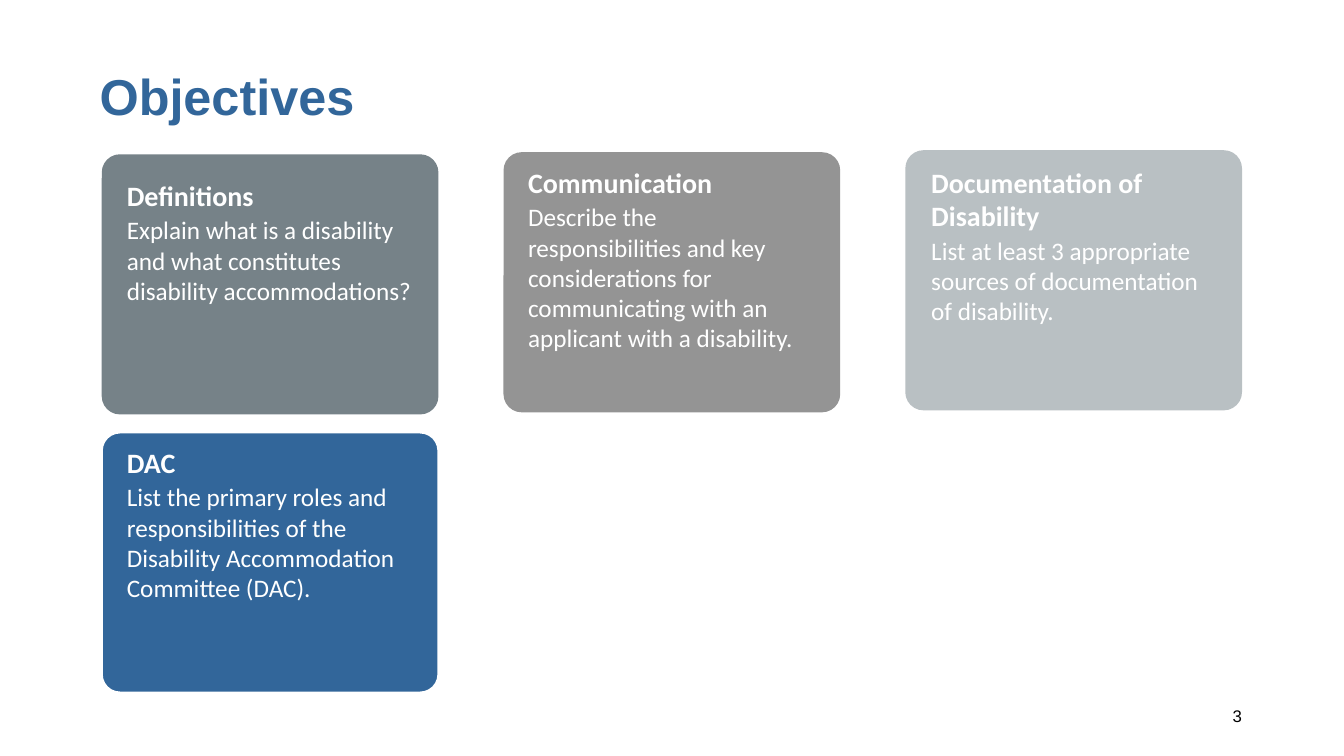
from pptx import Presentation
from pptx.util import Pt
from pptx.dml.color import RGBColor
from pptx.enum.shapes import MSO_SHAPE as Shape
from pptx.enum.text import PP_ALIGN as Align

WHITE = RGBColor(0xFF, 0xFF, 0xFF)
BLACK = RGBColor(0, 0, 0)
BLUE = RGBColor(0x32, 0x66, 0x9A)
SLATE = RGBColor(0x76, 0x82, 0x88)
GRAY = RGBColor(0x94, 0x94, 0x94)
SILVER = RGBColor(0xB9, 0xC0, 0xC3)

# Card grid
LEFT, PITCH = 72.7, 287
WIDE, HIGH = 240.5, 185.8
LINE = 24  # one line of a heading

# column, card top, fill, text inset, text width, heading top, heading lines,
# heading, body
CARDS = [
    (0, 110.2, SLATE, 10.8, 219.6, 123.8, 1, "Definitions",
     "Explain what is a disability and what constitutes "
     "disability accommodations?"),
    (1, 108.7, GRAY, 10.4, 219.6, 114.5, 1, "Communication",
     "Describe the responsibilities and key considerations for "
     "communicating with an applicant with a disability."),
    (2, 107.3, SILVER, 11.4, 214.6, 114.5, 2, "Documentation of Disability",
     "List at least 3 appropriate sources of documentation of disability."),
    (0, 308.9, BLUE, 10.8, 219.6, 314.6, 1, "DAC",
     "List the primary roles and responsibilities of the Disability "
     "Accommodation Committee (DAC)."),
]


def add_text(slide, text, left, top, width, height, size, color,
             face="Calibri", bold=False, align=Align.LEFT):
    box = slide.shapes.add_textbox(Pt(left), Pt(top), Pt(width), Pt(height))
    frame = box.text_frame
    frame.word_wrap = True
    frame.text = text
    para = frame.paragraphs[0]
    para.alignment = align
    font = para.runs[0].font
    font.name, font.size, font.bold = face, Pt(size), bold
    font.color.rgb = color


def add_card(slide, col, top, fill, inset, width, start, lines, head, body):
    left = LEFT + col * PITCH
    card = slide.shapes.add_shape(
        Shape.ROUNDED_RECTANGLE, Pt(left), Pt(top), Pt(WIDE), Pt(HIGH))
    card.adjustments[0] = 0.07
    card.shadow.inherit = False
    card.fill.solid()
    card.fill.fore_color.rgb = fill
    if fill == BLUE:
        card.line.color.rgb = WHITE
        card.line.width = Pt(1.5)
    else:
        card.line.fill.background()

    # Heading, with the body just below its last line
    drop = lines * LINE + 2
    add_text(slide, head, left + inset, start, width, drop + 5.5,
             20, WHITE, bold=True)
    add_text(slide, body, left + inset, start + drop, width, 94,
             18, WHITE)


def main():
    deck = Presentation()
    deck.slide_width, deck.slide_height = Pt(960), Pt(540)
    slide = deck.slides.add_slide(deck.slide_layouts[6])

    # Title
    add_text(slide, "Objectives", 64.1, 43.2, 712.8, 51, 36, BLUE,
             face="Arial", bold=True)

    # Objective cards
    for card in CARDS:
        add_card(slide, *card)

    # Page number
    add_text(slide, "3", 678.2, 500.4, 216, 28.8, 12, BLACK,
             face="Arial", align=Align.RIGHT)

    deck.save("out.pptx")


if __name__ == "__main__":
    main()
